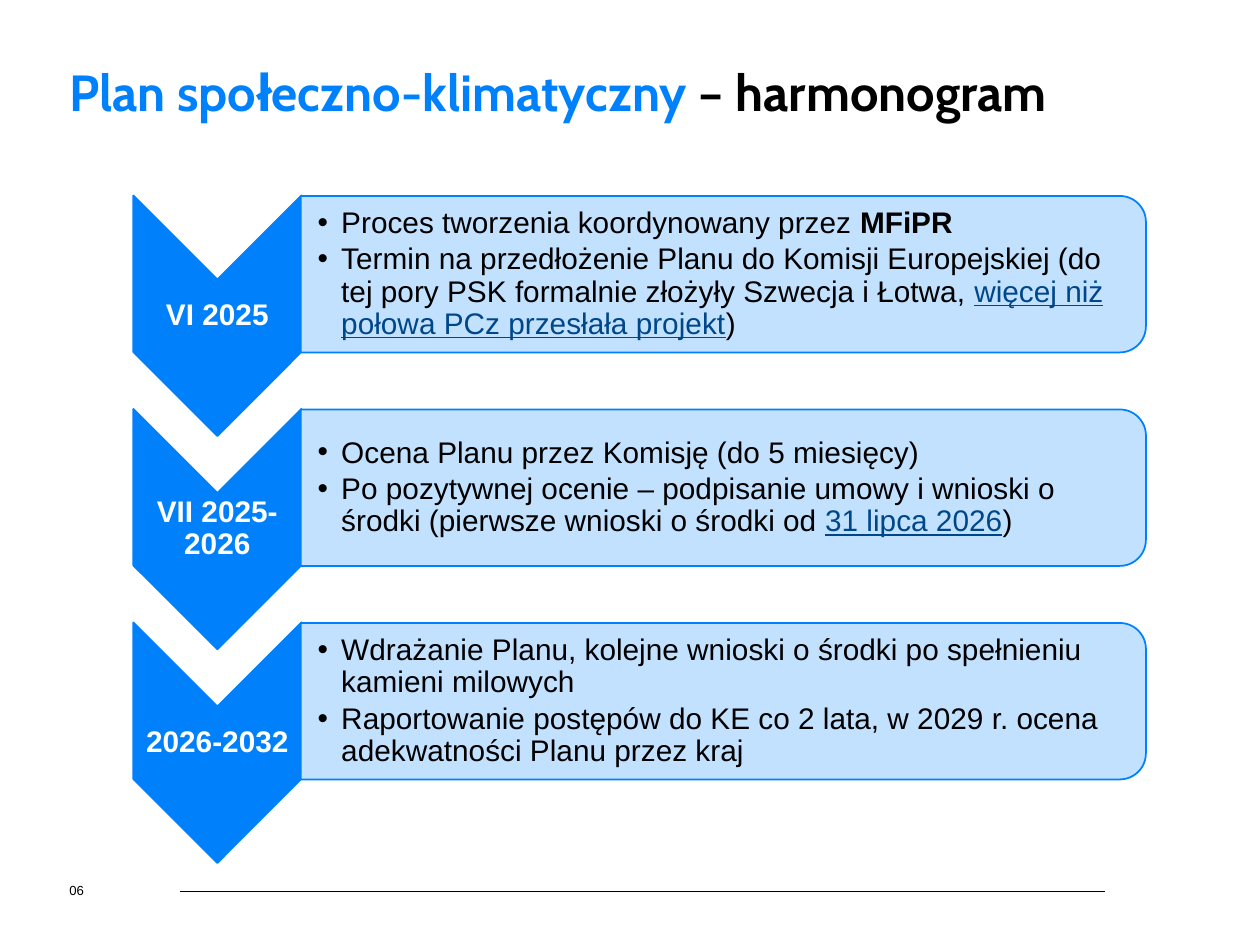
from dataclasses import dataclass

from lxml import etree
from pptx import Presentation
from pptx.dml.color import RGBColor
from pptx.enum.shapes import MSO_CONNECTOR, MSO_SHAPE
from pptx.enum.text import MSO_ANCHOR, PP_ALIGN
from pptx.oxml.ns import qn
from pptx.util import Pt

CHEVRON = MSO_SHAPE.CHEVRON
PANEL = MSO_SHAPE.ROUND_2_SAME_RECTANGLE
STRAIGHT = MSO_CONNECTOR.STRAIGHT
TOP, MIDDLE = MSO_ANCHOR.TOP, MSO_ANCHOR.MIDDLE
LEFT, CENTER = PP_ALIGN.LEFT, PP_ALIGN.CENTER


@dataclass(frozen=True)
class Theme:
    title_blue: str = "0081FC"
    blue: str = "0081FB"
    pale: str = "C1E1FF"
    link: str = "00478A"
    black: str = "000000"
    white: str = "FFFFFF"
    title_font: str = "Cabin"
    body_font: str = "Arial"
    title_size: float = 29
    body_size: float = 17
    number_size: float = 7.5


THEME = Theme()
LINK = {"color": THEME.link, "underline": True}
ROW_PITCH = 122
CHEVRON_CENTER = (124.2, 180.4)
PANEL_CENTER = (413.3, 156.7)

# Each stage: label, then bullets made of (text, format) spans
STAGES = [
    ("VI 2025", [
        [("Proces tworzenia koordynowany przez ", {}), ("MFiPR", {"bold": True})],
        [("Termin na przedłożenie Planu do Komisji Europejskiej (do tej pory PSK "
          "formalnie złożyły Szwecja i Łotwa, ", {}),
         ("więcej niż połowa PCz przesłała projekt", LINK), (")", {})],
    ]),
    ("VII 2025- 2026", [
        [("Ocena Planu przez Komisję (do 5 miesięcy)", {})],
        [("Po pozytywnej ocenie – podpisanie umowy i wnioski o środki "
          "(pierwsze wnioski o środki od ", {}),
         ("31 lipca 2026", LINK), (")", {})],
    ]),
    ("2026-2032", [
        [("Wdrażanie Planu, kolejne wnioski o środki po spełnieniu kamieni milowych", {})],
        [("Raportowanie postępów do KE co 2 lata, w 2029 r. ocena "
          "adekwatności Planu przez kraj", {})],
    ]),
]


def add_span(para, text, *, size=THEME.body_size, font=THEME.body_font,
             color=THEME.black, bold=False, underline=False):
    span = para.add_run()
    span.text = text
    span.font.size = Pt(size)
    span.font.name = font
    span.font.bold = bold
    span.font.underline = underline
    span.font.color.rgb = RGBColor.from_string(color)


def set_bullet(para, indent):
    properties = para._p.get_or_add_pPr()
    properties.set("marL", str(Pt(indent)))
    properties.set("indent", str(-Pt(indent)))
    etree.SubElement(properties, qn("a:buFont"), typeface=THEME.body_font)
    etree.SubElement(properties, qn("a:buChar"), char="•")


def add_text(page, bounds, paragraphs, *, anchor=MIDDLE, align=LEFT, inset=0,
             left_inset=None, line_spacing=0.9, space_after=0, bullet_indent=None):
    box = page.shapes.add_textbox(*map(Pt, bounds))
    frame = box.text_frame
    frame.word_wrap = True
    frame.vertical_anchor = anchor
    frame.margin_left = Pt(inset if left_inset is None else left_inset)
    frame.margin_right = frame.margin_top = frame.margin_bottom = Pt(inset)
    for index, spans in enumerate(paragraphs):
        para = frame.add_paragraph() if index else frame.paragraphs[0]
        if bullet_indent:
            set_bullet(para, bullet_indent)
        para.alignment = align
        para.line_spacing = line_spacing
        para.space_after = Pt(space_after)
        for text, style in spans:
            add_span(para, text, **style)


def add_turned_shape(page, kind, center, size, fill):
    """Add an outlined shape turned a quarter clockwise about its center."""
    (x, y), (width, height) = center, size
    shape = page.shapes.add_shape(
        kind, Pt(x - width / 2), Pt(y - height / 2), Pt(width), Pt(height))
    shape.rotation = 90
    shape.shadow.inherit = False
    shape.fill.solid()
    shape.fill.fore_color.rgb = RGBColor.from_string(fill)
    shape.line.color.rgb = RGBColor.from_string(THEME.title_blue)
    shape.line.width = Pt(1)


def add_stage(page, row, label, bullets):
    shift = row * ROW_PITCH
    chevron_x, chevron_y = CHEVRON_CENTER[0], CHEVRON_CENTER[1] + shift
    panel_x, panel_y = PANEL_CENTER[0], PANEL_CENTER[1] + shift
    add_turned_shape(page, CHEVRON, (chevron_x, chevron_y), (137.4, 96), THEME.blue)
    add_text(page, (chevron_x - 48, chevron_y - 20.5, 96, 41),
             [[(label, {"color": THEME.white, "bold": True})]],
             align=CENTER, inset=0.8, space_after=6)
    add_turned_shape(page, PANEL, (panel_x, panel_y), (89.4, 483), THEME.pale)
    add_text(page, (172, panel_y - 40.3, 478.8, 80.6), bullets,
             inset=0.8, left_inset=9.5, space_after=2.5, bullet_indent=13.5)


def add_footer(page):
    rule = page.shapes.add_connector(STRAIGHT, Pt(103), Pt(509), Pt(631.5), Pt(509))
    rule.line.color.rgb = RGBColor.from_string(THEME.black)
    rule.line.width = Pt(0.25)
    etree.SubElement(rule._element.spPr, qn("a:effectLst"))
    add_text(page, (39.6, 504.7, 90, 8), [[("06", {"size": THEME.number_size})]],
             line_spacing=1, space_after=6)


def main():
    deck = Presentation()
    deck.slide_width, deck.slide_height = Pt(720), Pt(540)
    page = deck.slides.add_slide(deck.slide_layouts[6])
    heading = {"size": THEME.title_size, "font": THEME.title_font, "bold": True}
    add_text(page, (39.6, 38.9, 629.3, 61.2),
             [[("Plan społeczno-klimatyczny ", {**heading, "color": THEME.title_blue}),
               ("– harmonogram", heading)]], anchor=TOP)
    for row, (label, bullets) in enumerate(STAGES):
        add_stage(page, row, label, bullets)
    add_footer(page)
    deck.save("out.pptx")


if __name__ == "__main__":
    main()
